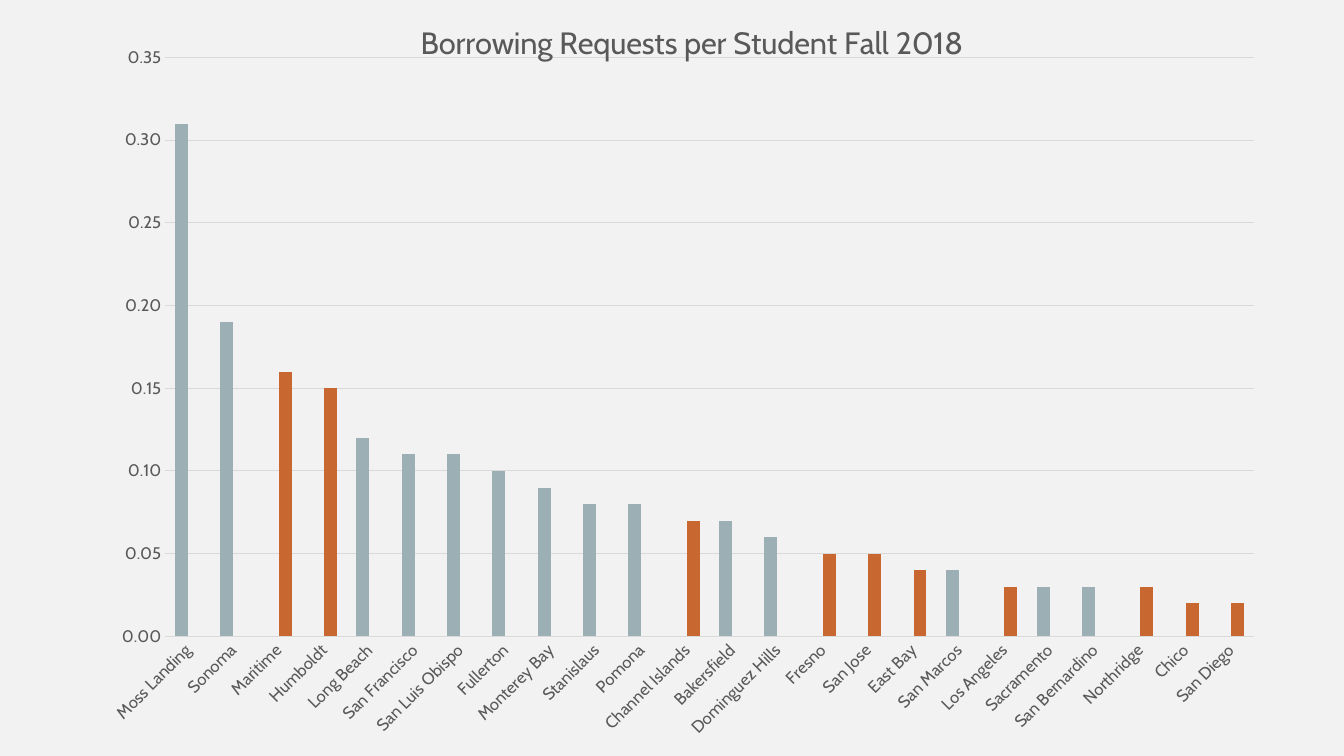
from lxml import etree
from pptx import Presentation
from pptx.chart.data import CategoryChartData
from pptx.dml.color import RGBColor
from pptx.enum.chart import XL_CHART_TYPE, XL_TICK_MARK
from pptx.oxml import parse_xml
from pptx.oxml.ns import nsdecls, qn
from pptx.util import Inches, Pt

FONT = "Cabin"
COLORS = {
    "background": "F2F2F2",
    "text": "595959",
    "grid": "D9D9D9",
    "gray_blue": "9BAFB5",
    "orange": "C96731",
}
TITLE = "Borrowing Requests per Student Fall 2018"
REQUESTS = [
    ("Moss Landing", 0.31, "gray_blue"),
    ("Sonoma", 0.19, "gray_blue"),
    ("Maritime", 0.16, "orange"),
    ("Humboldt", 0.15, "orange"),
    ("Long Beach", 0.12, "gray_blue"),
    ("San Francisco", 0.11, "gray_blue"),
    ("San Luis Obispo", 0.11, "gray_blue"),
    ("Fullerton", 0.10, "gray_blue"),
    ("Monterey Bay", 0.09, "gray_blue"),
    ("Stanislaus", 0.08, "gray_blue"),
    ("Pomona", 0.08, "gray_blue"),
    ("Channel Islands", 0.07, "orange"),
    ("Bakersfield", 0.07, "gray_blue"),
    ("Dominguez Hills", 0.06, "gray_blue"),
    ("Fresno", 0.05, "orange"),
    ("San Jose", 0.05, "orange"),
    ("East Bay", 0.04, "orange"),
    ("San Marcos", 0.04, "gray_blue"),
    ("Los Angeles", 0.03, "orange"),
    ("Sacramento", 0.03, "gray_blue"),
    ("San Bernardino", 0.03, "gray_blue"),
    ("Northridge", 0.03, "orange"),
    ("Chico", 0.02, "orange"),
    ("San Diego", 0.02, "orange"),
]
SERIES = {"Series 1": "gray_blue", "Series 2": "orange"}


def rgb(name):
    return RGBColor.from_string(COLORS[name])


def style_font(font, size):
    font.name = FONT
    font.size = Pt(size)
    font.bold = False
    font.color.rgb = rgb("text")


def style_line(line):
    line.color.rgb = rgb("grid")
    line.width = Pt(0.75)


def set_layout(parent, **positions):
    layout = parent.find(qn("c:layout"))
    if layout is None:
        layout = parse_xml(f"<c:layout {nsdecls('c')}/>")
        before = parent.find(qn("c:tx"))
        parent.insert(0 if before is None else parent.index(before) + 1, layout)
    manual = etree.SubElement(layout, qn("c:manualLayout"))
    for tag, value in positions.items():
        etree.SubElement(manual, qn(f"c:{tag}")).set("val", str(value))


def add_requests_chart(slide):
    data = CategoryChartData(number_format="0.00")
    data.categories = [campus for campus, value, color in REQUESTS]
    for name, series_color in SERIES.items():
        data.add_series(name, [value if color == series_color else None
                               for campus, value, color in REQUESTS])
    frame = slide.shapes.add_chart(XL_CHART_TYPE.COLUMN_CLUSTERED, Inches(1.11), Inches(0),
                                   Inches(11.52), Inches(7.5), data)
    chart = frame.chart
    chart.has_legend = False
    style_font(chart.font, 10)
    plot = chart.plots[0]
    plot.gap_width = 150
    plot.overlap = 0
    plot.vary_by_categories = False
    for series, color in zip(plot.series, SERIES.values()):
        series.invert_if_negative = False
        series.format.fill.solid()
        series.format.fill.fore_color.rgb = rgb(color)
    return chart


def style_title(chart):
    title = chart.chart_title
    title.text_frame.text = TITLE
    style_font(title.text_frame.paragraphs[0].runs[0].font, 22)
    title.include_in_layout = False
    element = chart._chartSpace.chart.find(qn("c:title"))
    element.find(qn("c:overlay")).set("val", "1")
    set_layout(element, xMode="edge", yMode="edge", x=0.261, y=0.021)


def style_axes(chart):
    for axis in (chart.category_axis, chart.value_axis):
        axis.major_tick_mark = axis.minor_tick_mark = XL_TICK_MARK.NONE
        style_font(axis.tick_labels.font, 12)
    campuses, values = chart.category_axis, chart.value_axis
    style_line(campuses.format.line)
    campuses._element.find(qn("c:txPr")).find(qn("a:bodyPr")).set("rot", "-60000000")
    values.minimum_scale = 0
    values.maximum_scale = 0.35
    values.major_unit = 0.05
    values.tick_labels.number_format = "0.00"
    values.tick_labels.number_format_is_linked = False
    values.format.line.fill.background()
    style_line(values.major_gridlines.format.line)


def main():
    presentation = Presentation()
    presentation.slide_width = Inches(13.33)
    presentation.slide_height = Inches(7.5)
    slide = presentation.slides.add_slide(presentation.slide_layouts[6])
    slide.background.fill.solid()
    slide.background.fill.fore_color.rgb = rgb("background")
    chart = add_requests_chart(slide)
    style_title(chart)
    style_axes(chart)
    set_layout(chart._chartSpace.chart.plotArea, layoutTarget="inner", xMode="edge",
               yMode="edge", x=0.046, y=0.076, w=0.937, h=0.766)
    presentation.save("out.pptx")


if __name__ == "__main__":
    main()
